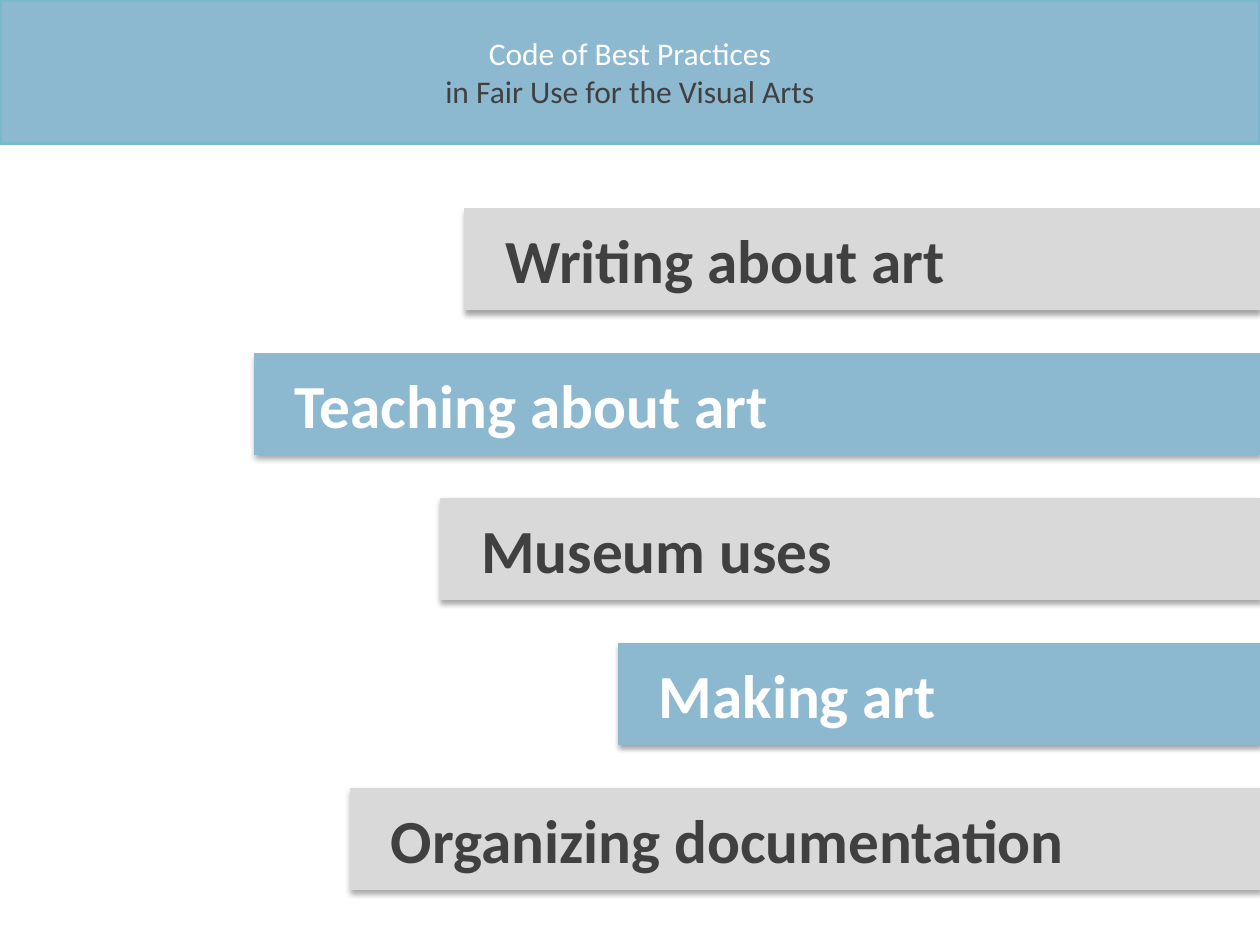
import pptx
import pptx.dml.color
import pptx.enum.shapes
import pptx.enum.text
import pptx.oxml
import pptx.oxml.ns
import pptx.util

Inches = pptx.util.Inches
Pt = pptx.util.Pt

COLORS = {
    "blue": "8CB8D0",
    "blue_edge": "79B9CE",
    "gray": "D9D9D9",
    "dark": "404040",
    "white": "FFFFFF",
    "shadow": "000000",
}
FONT = "Calibri"
SLIDE_WIDTH, SLIDE_HEIGHT = 10, 7.5
TITLE_LINES = [
    ("Code of Best Practices", "white"),
    ("in Fair Use for the Visual Arts", "dark"),
]
TOPICS = [
    ("Writing about art", 3.69),
    ("Teaching about art", 2.02),
    ("Museum uses", 3.5),
    ("Making art", 4.91),
    ("Organizing documentation", 2.78),
]
BAR_SCHEMES = [("gray", "dark"), ("blue", "white")]


def rgb(name):
    """Return the named colour."""
    return pptx.dml.color.RGBColor.from_string(COLORS[name])


def paint(shape, fill, line, line_width):
    """Give a shape a solid fill and an outline."""
    shape.fill.solid()
    shape.fill.fore_color.rgb = rgb(fill)
    shape.line.color.rgb = rgb(line)
    shape.line.width = Pt(line_width)


def write(paragraph, text, size, color, bold, alignment):
    """Put formatted text into a paragraph."""
    paragraph.text = text
    paragraph.alignment = alignment
    paragraph.font.name = FONT
    paragraph.font.size = Pt(size)
    paragraph.font.bold = bold
    paragraph.font.color.rgb = rgb(color)


def add_drop_shadow(shape):
    """Add a soft shadow that falls straight down."""
    shape.shadow.inherit = False
    effects = shape._element.spPr.find(pptx.oxml.ns.qn("a:effectLst"))
    effects.append(pptx.oxml.parse_xml(
        f'<a:outerShdw {pptx.oxml.ns.nsdecls("a")} blurRad="{Pt(3.1)}" '
        f'dist="{Pt(1.8)}" dir="5400000" rotWithShape="0">'
        f'<a:srgbClr val="{COLORS["shadow"]}"><a:alpha val="35000"/></a:srgbClr>'
        '</a:outerShdw>'))


def place_title(slide, left, top, width, height):
    """Turn the title placeholder into the banner."""
    title = slide.shapes.title
    title.left, title.top = Inches(left), Inches(top)
    title.width, title.height = Inches(width), Inches(height)
    paint(title, "blue", "blue_edge", 2)
    frame = title.text_frame
    frame.auto_size = pptx.enum.text.MSO_AUTO_SIZE.NONE
    frame.vertical_anchor = pptx.enum.text.MSO_ANCHOR.MIDDLE
    for index, (text, color) in enumerate(TITLE_LINES):
        paragraph = frame.add_paragraph() if index else frame.paragraphs[0]
        write(paragraph, text, 18, color, False, pptx.enum.text.PP_ALIGN.CENTER)


def add_bar(slide, text, scheme, left, top, width, height):
    """Add one shadowed topic bar."""
    fill, color = scheme
    bar = slide.shapes.add_shape(
        pptx.enum.shapes.MSO_SHAPE.RECTANGLE,
        Inches(left), Inches(top), Inches(width), Inches(height))
    paint(bar, fill, fill, 0.75)
    add_drop_shadow(bar)
    frame = bar.text_frame
    frame.margin_left = Inches(0.32)
    frame.vertical_anchor = pptx.enum.text.MSO_ANCHOR.MIDDLE
    write(frame.paragraphs[0], text, 35, color, True,
          pptx.enum.text.PP_ALIGN.LEFT)


def add_topics(slide, top, right, pitch, height):
    """Stack the topic bars, all ending at the right edge."""
    for index, (text, left) in enumerate(TOPICS):
        scheme = BAR_SCHEMES[index % len(BAR_SCHEMES)]
        add_bar(slide, text, scheme, left, top + index * pitch,
                right - left, height)


def main():
    """Build and save the slide."""
    presentation = pptx.Presentation()
    presentation.slide_width = Inches(SLIDE_WIDTH)
    presentation.slide_height = Inches(SLIDE_HEIGHT)
    slide = presentation.slides.add_slide(presentation.slide_layouts[5])
    place_title(slide, 0, 0, SLIDE_WIDTH, 1.14)
    add_topics(slide, 1.66, SLIDE_WIDTH, 1.15, 0.8)
    presentation.save("out.pptx")


if __name__ == "__main__":
    main()
